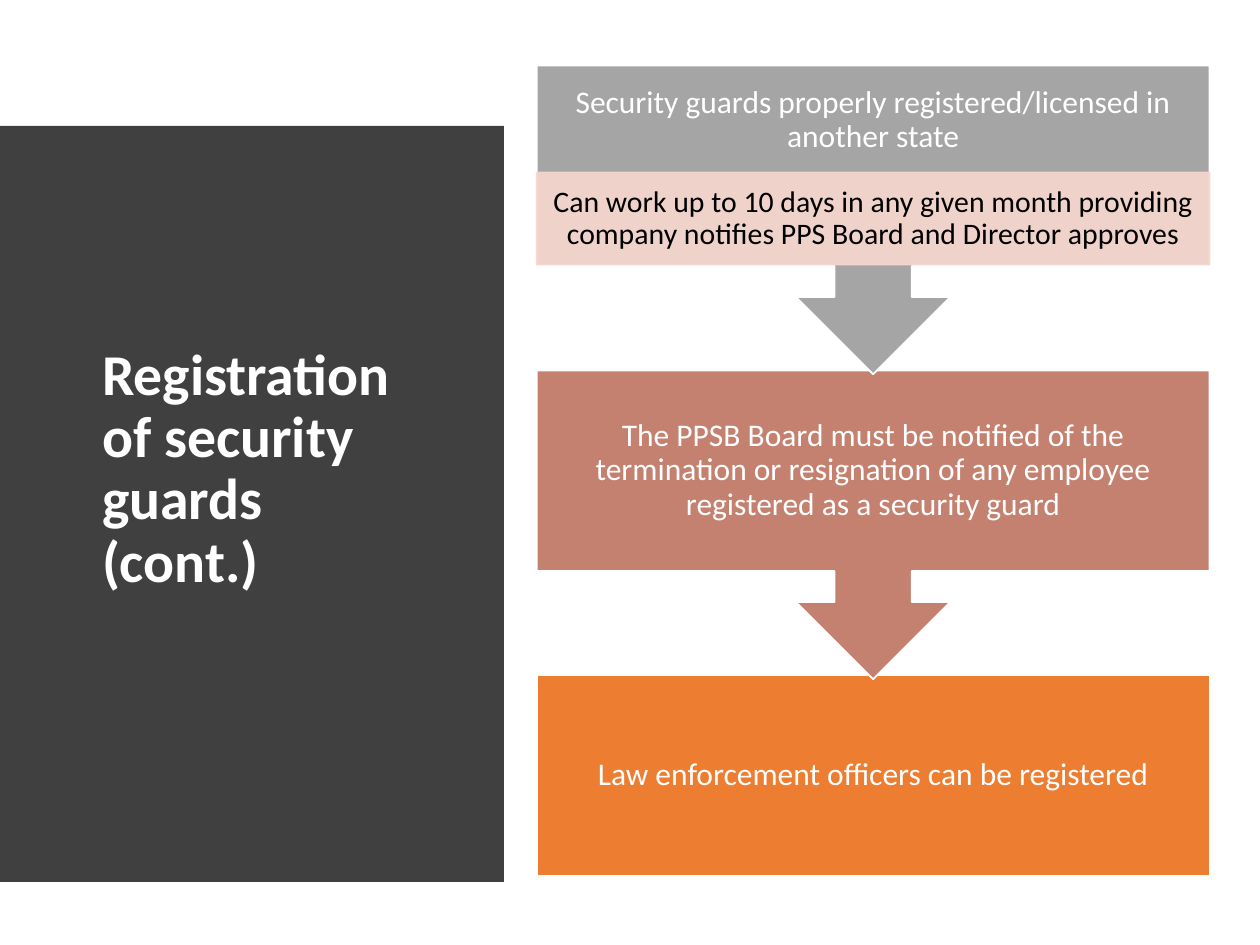
from lxml import etree
from pptx import Presentation
from pptx import util as u
from pptx.dml.color import RGBColor
from pptx.enum import shapes, text
from pptx.oxml.ns import qn

WHITE = RGBColor(0xFF, 0xFF, 0xFF)
BLACK = RGBColor(0, 0, 0)
CHARCOAL = RGBColor(0x40, 0x40, 0x40)
GRAY = RGBColor(0xA5, 0xA5, 0xA5)
CLAY = RGBColor(0xC4, 0x81, 0x70)
ORANGE = RGBColor(0xED, 0x7D, 0x31)
BLUSH = RGBColor(0xF8, 0xD7, 0xCE)

prs = Presentation()
prs.slide_width, prs.slide_height = u.Inches(10), u.Inches(7.5)
s = prs.slides.add_slide(prs.slide_layouts[5])

TOP, BOTTOM = 0.52, 6.96
COL_X, COL_W = 4.26, 5.34
ROW_STEP, BOX_H, CALLOUT_H = 2.42, 1.59, 2.45
NOTE_Y, NOTE_H = 1.37, 0.73


def format_text(tf, words, size, color, bold=False, align=text.PP_ALIGN.CENTER):
    tf.word_wrap = True
    tf.auto_size = text.MSO_AUTO_SIZE.NONE
    tf.vertical_anchor = text.MSO_ANCHOR.MIDDLE
    p = tf.paragraphs[0]
    p.text = words
    p.alignment = align
    p.line_spacing = 0.9
    p.font.name, p.font.size, p.font.bold = "Calibri", u.Pt(size), bold
    p.font.color.rgb = color


def add_step(kind, y, h, fill, line, words, size, color, pad_x, pad_top, pad_bottom):
    """Add one outlined step of the flow, with its text inside."""
    sp = s.shapes.add_shape(kind, *map(u.Inches, (COL_X, y, COL_W, h)))
    sp.shadow.inherit = False
    sp.fill.solid()
    sp.fill.fore_color.rgb = fill
    sp.line.color.rgb = line
    sp.line.width = u.Pt(1)
    tf = sp.text_frame
    tf.margin_left = tf.margin_right = u.Inches(pad_x)
    tf.margin_top, tf.margin_bottom = u.Inches(pad_top), u.Inches(pad_bottom)
    format_text(tf, words, size, color)
    return sp


# Dark panel whose right edge bulges as a parabola
EDGE_X, BULGE, SEGMENTS = 3.81, 0.18, 40
edge = []
for i in range(SEGMENTS + 1):
    t = i / SEGMENTS
    edge.append((EDGE_X + BULGE * (1 - (2 * t - 1) ** 2), TOP + t * (BOTTOM - TOP)))
builder = s.shapes.build_freeform(0.4, TOP, scale=u.Inches(1))
builder.add_line_segments(edge + [(0.4, BOTTOM)], close=True)
panel = builder.convert_to_shape()
panel.shadow.inherit = False
panel.fill.solid()
panel.fill.fore_color.rgb = CHARCOAL
panel.line.fill.background()

# Title, brought in front of the panel
title = s.shapes.title
title.left, title.top, title.width, title.height = map(u.Inches, (0.71, 1.11, 2.8, 5.24))
format_text(title.text_frame, "Registration of security guards (cont.)", 33, WHITE,
            bold=True, align=text.PP_ALIGN.LEFT)
panel._element.addnext(title._element)

# Steps from the bottom up, so that each arrow tip lies over the next box
RECT, CALLOUT = shapes.MSO_SHAPE.RECTANGLE, shapes.MSO_SHAPE.DOWN_ARROW_CALLOUT
PAD = 0.14
steps = [
    (RECT, 2, BOX_H, ORANGE, PAD, "Law enforcement officers can be registered"),
    (CALLOUT, 1, CALLOUT_H, CLAY, PAD,
     "The PPSB Board must be notified of the termination or resignation "
     "of any employee registered as a security guard"),
    (CALLOUT, 0, CALLOUT_H, GRAY, PAD + NOTE_H,
     "Security guards properly registered/licensed in another state"),
]
for kind, row, h, fill, pad_bottom, words in steps:
    add_step(kind, TOP + row * ROW_STEP, h, fill, WHITE, words, 18, WHITE,
             PAD, PAD, pad_bottom)

# Translucent note over the first step
note = add_step(RECT, NOTE_Y, NOTE_H, BLUSH, BLUSH,
                "Can work up to 10 days in any given month providing "
                "company notifies PPS Board and Director approves",
                17, BLACK, 0.13, 0.02, 0.02)
for color in note._element.spPr.iter(qn("a:srgbClr")):
    etree.SubElement(color, qn("a:alpha"), val="90000")

prs.save("out.pptx")
